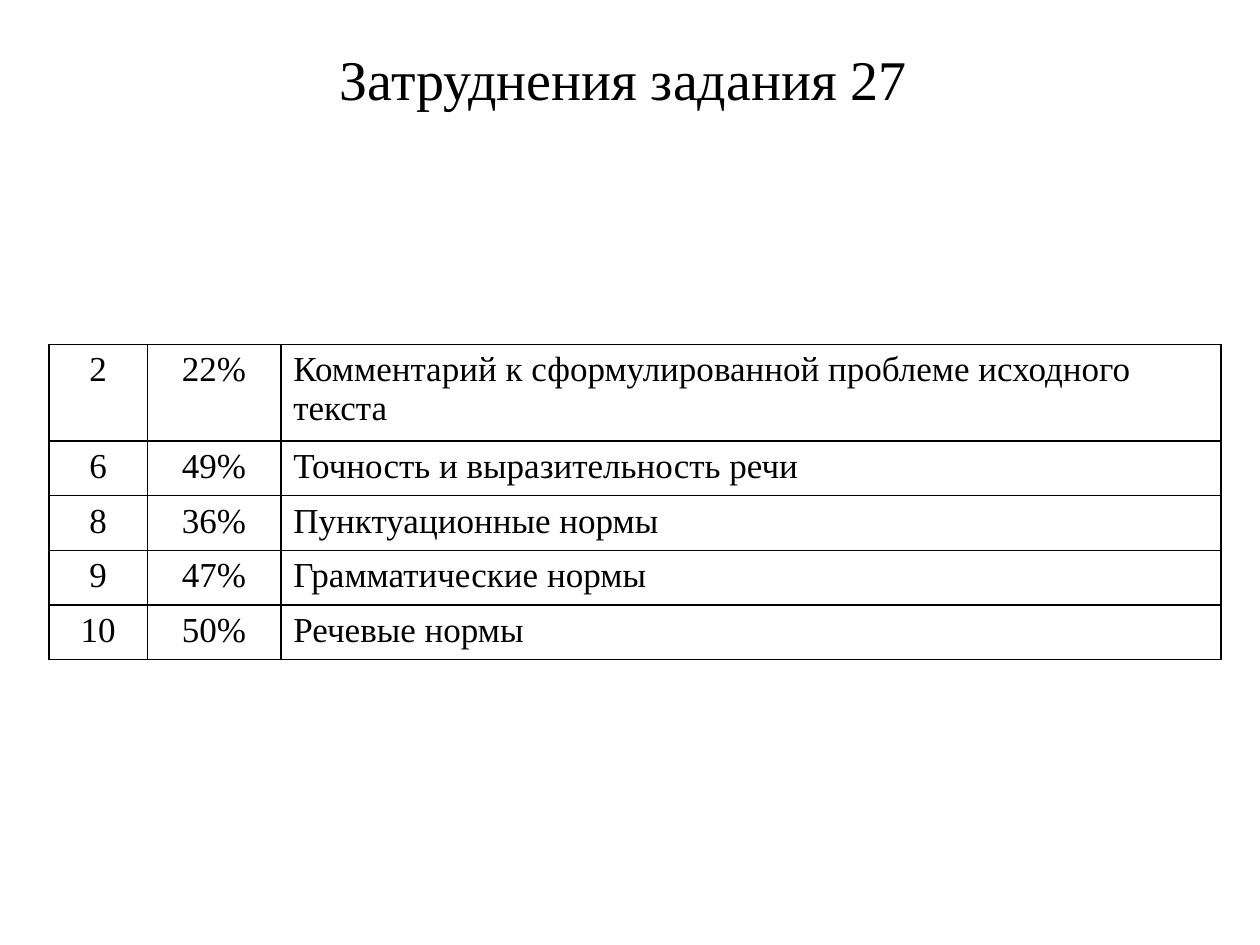
from lxml.etree import SubElement
from pptx import Presentation
from pptx.dml.color import RGBColor
from pptx.enum.text import MSO_ANCHOR, PP_ALIGN
from pptx.oxml.ns import qn
from pptx.util import Cm, Pt

COLORS = {"text": "000000", "border": "000000", "cell": "FFFFFF"}
TITLE_FONT = {"name": "Times New Roman", "size": Pt(32)}
CELL_FONT = {"name": "Times New Roman", "size": Pt(20)}
COL_WIDTHS = (1.98, 2.69, 18.95)
COL_ALIGNS = (PP_ALIGN.CENTER, PP_ALIGN.CENTER, PP_ALIGN.LEFT)
ROW_HEIGHT = 1.04
ROWS = (
    ("2", "22%", "Комментарий к сформулированной проблеме исходного текста"),
    ("6", "49%", "Точность и выразительность речи"),
    ("8", "36%", "Пунктуационные нормы"),
    ("9", "47%", "Грамматические нормы"),
    ("10", "50%", "Речевые нормы"),
)


def write(tf, text, font, align):
    """Put one formatted line of text into a text frame."""
    tf.word_wrap = True
    p = tf.paragraphs[0]
    p.alignment = align
    r = p.add_run()
    r.text = text
    for name, value in font.items():
        setattr(r.font, name, value)
    r.font.color.rgb = RGBColor.from_string(COLORS["text"])


def set_borders(cell, width=Pt(1)):
    """Draw a solid line on every side of a cell."""
    tcPr = cell._tc.get_or_add_tcPr()
    for i, side in enumerate(("a:lnL", "a:lnR", "a:lnT", "a:lnB")):
        ln = SubElement(tcPr, qn(side), w=str(width))
        tcPr.insert(i, ln)
        fill = SubElement(ln, qn("a:solidFill"))
        SubElement(fill, qn("a:srgbClr"), val=COLORS["border"])


def add_title(s, text, left, top, width, height):
    """Add the centred slide title in the given box."""
    sp = s.shapes.add_textbox(Cm(left), Cm(top), Cm(width), Cm(height))
    sp.text_frame.vertical_anchor = MSO_ANCHOR.MIDDLE
    write(sp.text_frame, text, TITLE_FONT, PP_ALIGN.CENTER)


def add_criteria_table(s, left, top):
    """Add the table of criteria, scores and descriptions."""
    table = s.shapes.add_table(
        len(ROWS), len(COL_WIDTHS), Cm(left), Cm(top),
        Cm(sum(COL_WIDTHS)), Cm(ROW_HEIGHT * len(ROWS))).table
    table.first_row = table.horz_banding = False
    for col, width in zip(table.columns, COL_WIDTHS):
        col.width = Cm(width)
    for row, texts in zip(table.rows, ROWS):
        row.height = Cm(ROW_HEIGHT)
        for cell, text, align in zip(row.cells, texts, COL_ALIGNS):
            cell.fill.solid()
            cell.fill.fore_color.rgb = RGBColor.from_string(COLORS["cell"])
            write(cell.text_frame, text, CELL_FONT, align)
            set_borders(cell)


def main():
    """Build and save the slide."""
    prs = Presentation()
    prs.slide_width, prs.slide_height = Cm(25.4), Cm(19.05)
    s = prs.slides.add_slide(prs.slide_layouts[6])
    add_title(s, "Затруднения задания 27", 1.78, 0.58, 21.59, 1.98)
    add_criteria_table(s, 0.99, 6.94)
    prs.save("out.pptx")


if __name__ == "__main__":
    main()
